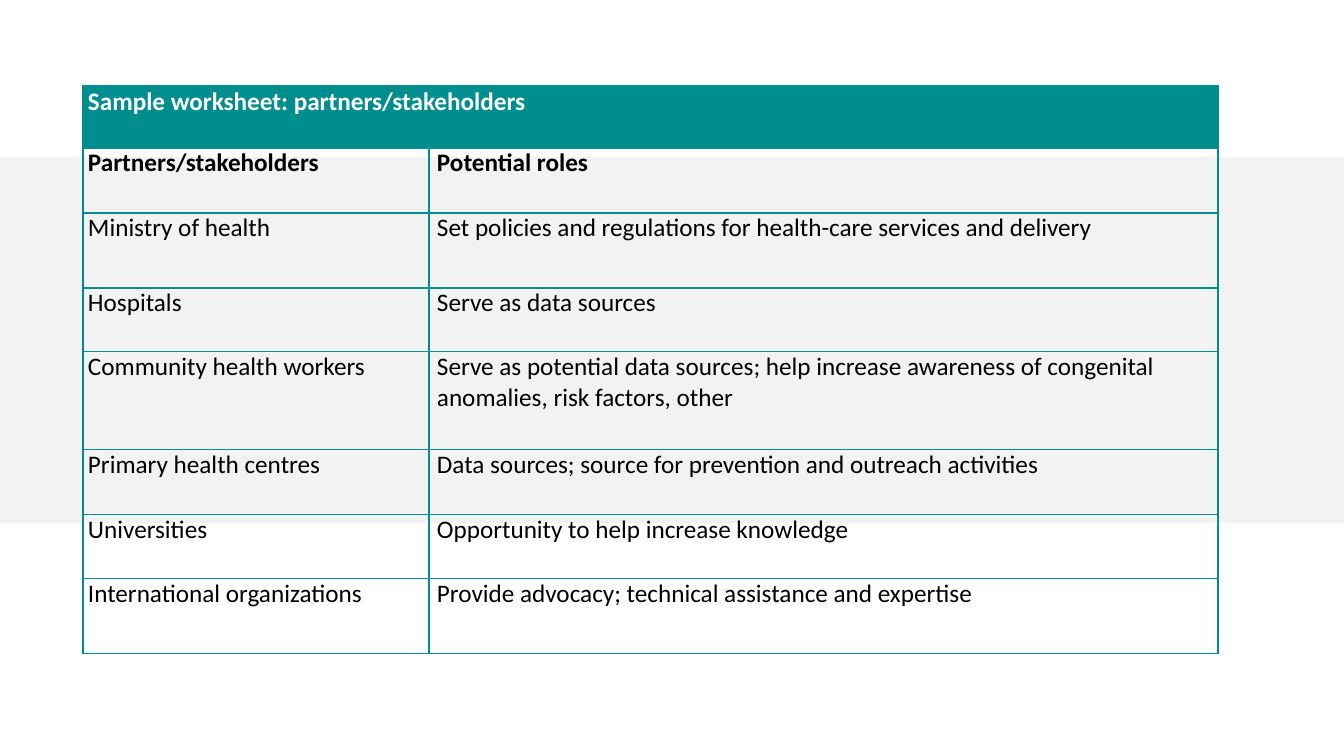
import pptx
import pptx.util
import pptx.dml.color
import pptx.enum.shapes
import pptx.oxml.ns
import lxml.etree

TEAL = pptx.dml.color.RGBColor(0x00, 0x8D, 0x8D)
BAND_GREY = pptx.dml.color.RGBColor(0xF2, 0xF2, 0xF2)
WHITE = pptx.dml.color.RGBColor(0xFF, 0xFF, 0xFF)
BLACK = pptx.dml.color.RGBColor(0x00, 0x00, 0x00)

EMU_PER_PX = 914400 / 100.8
TITLE = "Sample worksheet: partners/stakeholders"
HEADINGS = ("Partners/stakeholders", "Potential roles")
PARTNER_ROLES = [
    ("Ministry of health",
     "Set policies and regulations for health-care services and delivery"),
    ("Hospitals", "Serve as data sources"),
    ("Community health workers",
     "Serve as potential data sources; help increase awareness of "
     "congenital anomalies, risk factors, other"),
    ("Primary health centres",
     "Data sources; source for prevention and outreach activities"),
    ("Universities", "Opportunity to help increase knowledge"),
    ("International organizations",
     "Provide advocacy; technical assistance and expertise"),
]
COLUMN_WIDTHS = (346, 789)
ROW_HEIGHTS = (62, 65, 75, 64, 98, 65, 64, 75)
INDENTS = (5, 8)


def px(length):
    return pptx.util.Emu(round(length * EMU_PER_PX))


class WorksheetSlide:
    font_name = "Calibri"
    font_size = pptx.util.Pt(18)
    border_width = pptx.util.Pt(1)

    def __init__(self, presentation):
        self.slide = presentation.slides.add_slide(presentation.slide_layouts[6])

    def band(self, left, top, width, height, color):
        band = self.slide.shapes.add_shape(
            pptx.enum.shapes.MSO_SHAPE.RECTANGLE,
            px(left), px(top), px(width), px(height))
        band.shadow.inherit = False
        band.fill.solid()
        band.fill.fore_color.rgb = color
        band.line.fill.background()

    def table(self, left, top, widths, heights):
        table = self.slide.shapes.add_table(
            len(heights), len(widths), px(left), px(top),
            px(sum(widths)), px(sum(heights))).table
        table.first_row = table.horz_banding = False
        for column, width in zip(table.columns, widths):
            column.width = px(width)
        for row, height in zip(table.rows, heights):
            row.height = px(height)
        for cell in table.iter_cells():
            cell.margin_left = cell.margin_right = 0
            cell.margin_top = cell.margin_bottom = 0
            self.borders(cell)
            cell.fill.background()
        return table

    def borders(self, cell):
        properties = cell._tc.get_or_add_tcPr()
        for side in ("lnL", "lnR", "lnT", "lnB"):
            line = lxml.etree.SubElement(
                properties, pptx.oxml.ns.qn("a:" + side), w=str(self.border_width))
            fill = lxml.etree.SubElement(line, pptx.oxml.ns.qn("a:solidFill"))
            lxml.etree.SubElement(fill, pptx.oxml.ns.qn("a:srgbClr"), val=str(TEAL))

    def cell_text(self, cell, text, indent, color=BLACK, bold=False):
        paragraph = cell.text_frame.paragraphs[0]
        paragraph.text = text
        paragraph._p.get_or_add_pPr().set("marL", str(px(indent)))
        font = paragraph.runs[0].font
        font.name = self.font_name
        font.size = self.font_size
        font.color.rgb = color
        font.bold = bold


def main():
    presentation = pptx.Presentation()
    presentation.slide_width = px(1344)
    presentation.slide_height = px(756)
    worksheet = WorksheetSlide(presentation)
    worksheet.band(0, 157, 1344, 366, BAND_GREY)

    partners = worksheet.table(83, 86, COLUMN_WIDTHS, ROW_HEIGHTS)
    title = partners.cell(0, 0)
    title.merge(partners.cell(0, 1))
    title.fill.solid()
    title.fill.fore_color.rgb = TEAL
    worksheet.cell_text(title, TITLE, INDENTS[0], WHITE, bold=True)

    for row, texts in enumerate([HEADINGS] + PARTNER_ROLES, start=1):
        for column, text in enumerate(texts):
            worksheet.cell_text(partners.cell(row, column), text,
                                INDENTS[column], bold=texts is HEADINGS)

    presentation.save("out.pptx")


if __name__ == "__main__":
    main()
